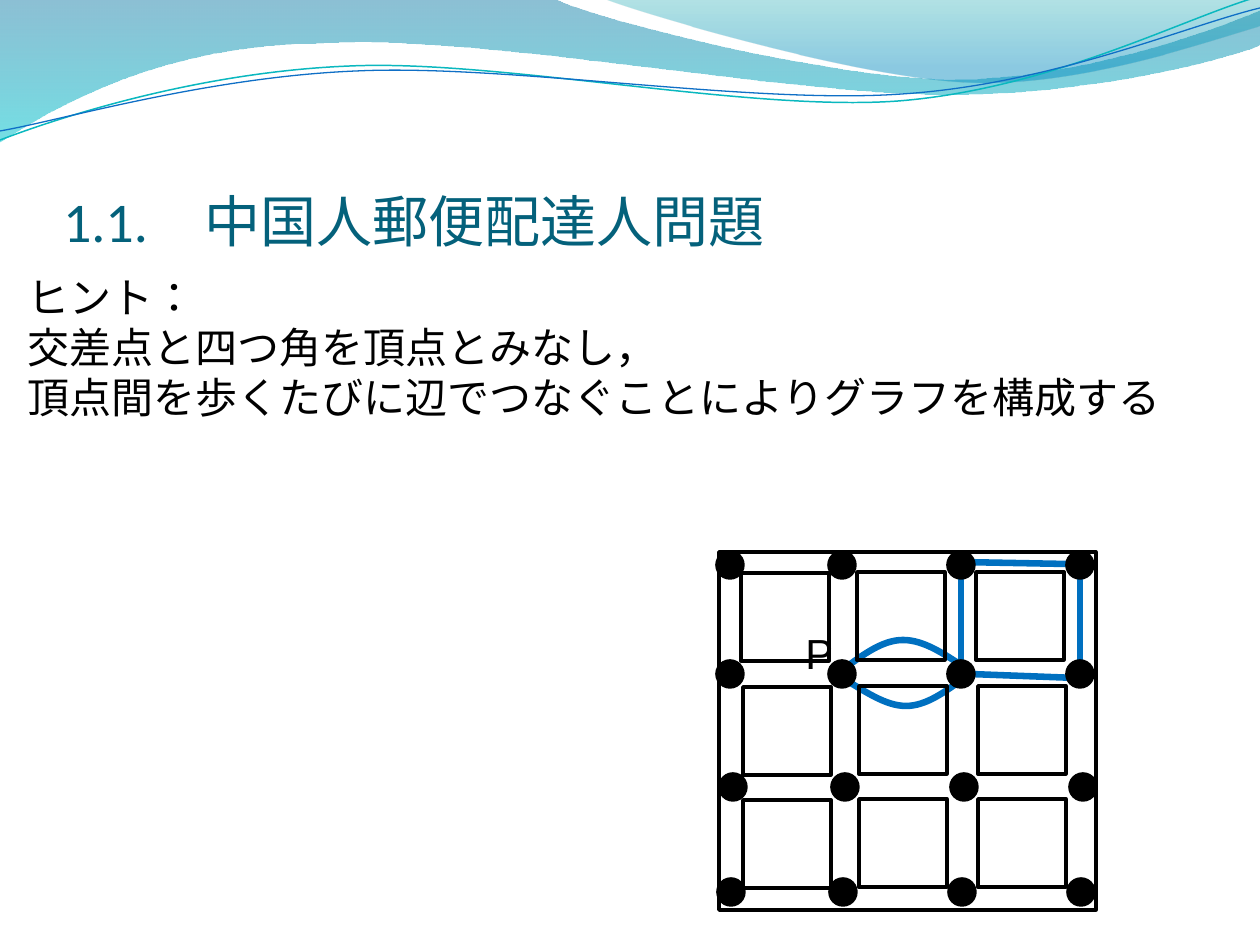
from lxml.etree import SubElement
from pptx import Presentation
from pptx.dml.color import RGBColor
from pptx.enum.lang import MSO_LANGUAGE_ID as LANG
from pptx.enum.shapes import MSO_CONNECTOR, MSO_SHAPE
from pptx.enum.text import MSO_ANCHOR as ANCHOR, MSO_AUTO_SIZE as AUTO, PP_ALIGN as ALIGN
from pptx.oxml.ns import qn
from pptx.util import Pt

SCALE = 914400 / 126  # EMU in one px
BLACK, TEAL, ROAD = "000000", "04617B", "0070C0"


def px(v):
    return round(v * SCALE)


def color(hex_):
    return RGBColor.from_string(hex_)


def set_attrs(obj, values):
    for name, value in values.items():
        setattr(obj, name, value)


def style(sp, fill=None, line=None, width=2):
    sp.shadow.inherit = False
    if fill:
        sp.fill.solid()
        sp.fill.fore_color.rgb = color(fill)
    else:
        sp.fill.background()
    if line:
        sp.line.color.rgb = color(line)
        sp.line.width = Pt(width)
    else:
        sp.line.fill.background()


def gradient(sp, stops):
    """Fill from top to bottom with (position, colour, opacity %) stops."""
    sp.fill.gradient()
    sp.fill.gradient_angle = 270
    for stop, (pos, hex_, _) in zip(sp.fill.gradient_stops, stops):
        stop.position = pos
        stop.color.rgb = color(hex_)
    clrs = sp.element.spPr.find(qn("a:gradFill")).iter(qn("a:srgbClr"))
    for clr, (_, _, opacity) in zip(clrs, stops):
        SubElement(clr, qn("a:alpha")).set("val", str(opacity * 1000))


def add_path(s, left, top, start, steps, close=False):
    """Draw 2-number steps as lines and 6-number steps as Bezier curves."""
    ends = [(px(left + p[-2]), px(top + p[-1])) for p in [start, *steps]]
    fb = s.shapes.build_freeform(*ends[0], scale=1.0)
    fb.add_line_segments(ends[1:], close=close)
    sp = fb.convert_to_shape()
    outline = next(sp.element.iter(qn("a:path")))
    for segment, step in zip(outline.findall(qn("a:lnTo")), steps):
        if len(step) == 6:
            curve = SubElement(outline, qn("a:cubicBezTo"))
            for x, y in zip(step[::2], step[1::2]):
                pt = SubElement(curve, qn("a:pt"))
                pt.set("x", str(px(left + x) - sp.left))
                pt.set("y", str(px(top + y) - sp.top))
            outline.replace(segment, curve)
    return sp


def add_shape(s, kind, x, y, w, h, **look):
    sp = s.shapes.add_shape(kind, *map(px, (x, y, w, h)))
    style(sp, line=BLACK, **look)


def add_line(s, x1, y1, x2, y2):
    cx = s.shapes.add_connector(MSO_CONNECTOR.STRAIGHT, *map(px, (x1, y1, x2, y2)))
    cx.line.color.rgb = color(ROAD)
    cx.line.width = Pt(3.75)
    SubElement(cx.element.spPr, qn("a:effectLst"))


def write(tf, lines, size, font, hex_):
    for i, text in enumerate(lines):
        p = tf.paragraphs[0] if i == 0 else tf.add_paragraph()
        p.alignment = ALIGN.LEFT
        r = p.add_run()
        r.text = text
        set_attrs(r.font, {"size": Pt(size), "name": font,
                           "language_id": LANG.JAPANESE})
        r.font.color.rgb = color(hex_)


def add_text(s, x, y, w, h, lines, font):
    tf = s.shapes.add_textbox(*map(px, (x, y, w, h))).text_frame
    tf.word_wrap = True
    write(tf, lines, 24, font, BLACK)


def waves(s, left, top):
    # Translucent bands
    bands = [
        ((0, -1),
         [(554, -1), (600, 21, 837, 79, 955, 79),
          (1075, 79, 1207, 33, 1260, 11), (1261, 45),
          (1239, 55, 1096, 96, 940, 94), (784, 94, 481, 35, 324, 43),
          (163, 44, 58, 105, -1, 142)],
         [(0, "0074A1", 45), (1, "00C6CF", 55)]),
        ((604, -1),
         [(641, 14, 859, 78, 969, 82), (1079, 87, 1211, 40, 1260, 26), (1260, 0)],
         [(0, "00A1A9", 30), (0.8, "008BBF", 45)]),
    ]
    for start, steps, stops in bands:
        sp = add_path(s, left, top, start, steps, close=True)
        style(sp)
        gradient(sp, stops)
    # Thin lines
    strands = [
        ((0, 140), [(60, 117, 199, 72, 349, 66), (498, 59, 747, 112, 898, 101),
                    (1050, 89, 1182, 19, 1257, -3)], "0AB8BF", 0.85),
        ((0, 131), [(59, 121, 207, 77, 357, 71), (508, 64, 752, 105, 903, 94),
                    (1053, 84, 1186, 26, 1260, 8)], "0F6FC6", 0.75),
    ]
    for start, steps, hex_, width in strands:
        style(add_path(s, left, top, start, steps), line=hex_, width=width)


def title(s, x, y, w, h, text):
    sp = s.shapes.title
    set_attrs(sp, dict(zip(("left", "top", "width", "height"), map(px, (x, y, w, h)))))
    tf = sp.text_frame
    set_attrs(tf, {"margin_left": 0, "margin_right": 0, "margin_top": px(6),
                   "margin_bottom": 0, "vertical_anchor": ANCHOR.BOTTOM,
                   "word_wrap": True, "auto_size": AUTO.NONE})
    write(tf, [text], 32, "Calibri", TEAL)


def street_map(s, left, top, w, h):
    # Walked route
    arcs = [
        ((125, 127), [(147, 140, 167, 154, 187, 154), (207, 154, 226, 140, 245, 126)]),
        ((245, 115), [(225, 102, 205, 88, 184, 88), (164, 88, 145, 102, 126, 116)]),
    ]
    for start, steps in arcs:
        style(add_path(s, left, top, start, steps), line=ROAD, width=3.75)
    walks = [(242, 10, 242, 118), (361, 15, 361, 123),
             (348, 12, 241, 10), (357, 126, 250, 122)]
    for x1, y1, x2, y2 in walks:
        add_line(s, left + x1, top + y1, left + x2, top + y2)

    # Outer border and city blocks
    add_shape(s, MSO_SHAPE.RECTANGLE, left, top, w, h)
    for col, x in enumerate((22, 138, 257)):
        for y, shift in ((21, 0), (135, 2), (248, 2)):
            add_shape(s, MSO_SHAPE.RECTANGLE, left + x + shift,
                      top + y - (col > 0), 88, 88)

    # Start label and crossings
    add_text(s, left + 74, top + 69, 45, 64, ["P"], "Arial")
    for x in (-2, 110, 229, 348):
        for y, shift in ((0, 0), (109, 0), (222, 3), (327, 1)):
            add_shape(s, MSO_SHAPE.OVAL, left + x + shift, top + y, 26, 26, fill=BLACK)


def main():
    prs = Presentation()
    set_attrs(prs, {"slide_width": px(1260), "slide_height": px(945)})
    s = prs.slides.add_slide(prs.slide_layouts[5])
    waves(s, 0, 0)
    title(s, 63, 97, 1134, 157, "1.1.　中国人郵便配達人問題")
    add_text(s, 15, 265, 1235, 605,
             ["ヒント：", "交差点と四つ角を頂点とみなし，",
              "頂点間を歩くたびに辺でつなぐことによりグラフを構成する"], "Calibri")
    street_map(s, 719, 552, 377, 358)
    prs.save("out.pptx")


if __name__ == "__main__":
    main()
